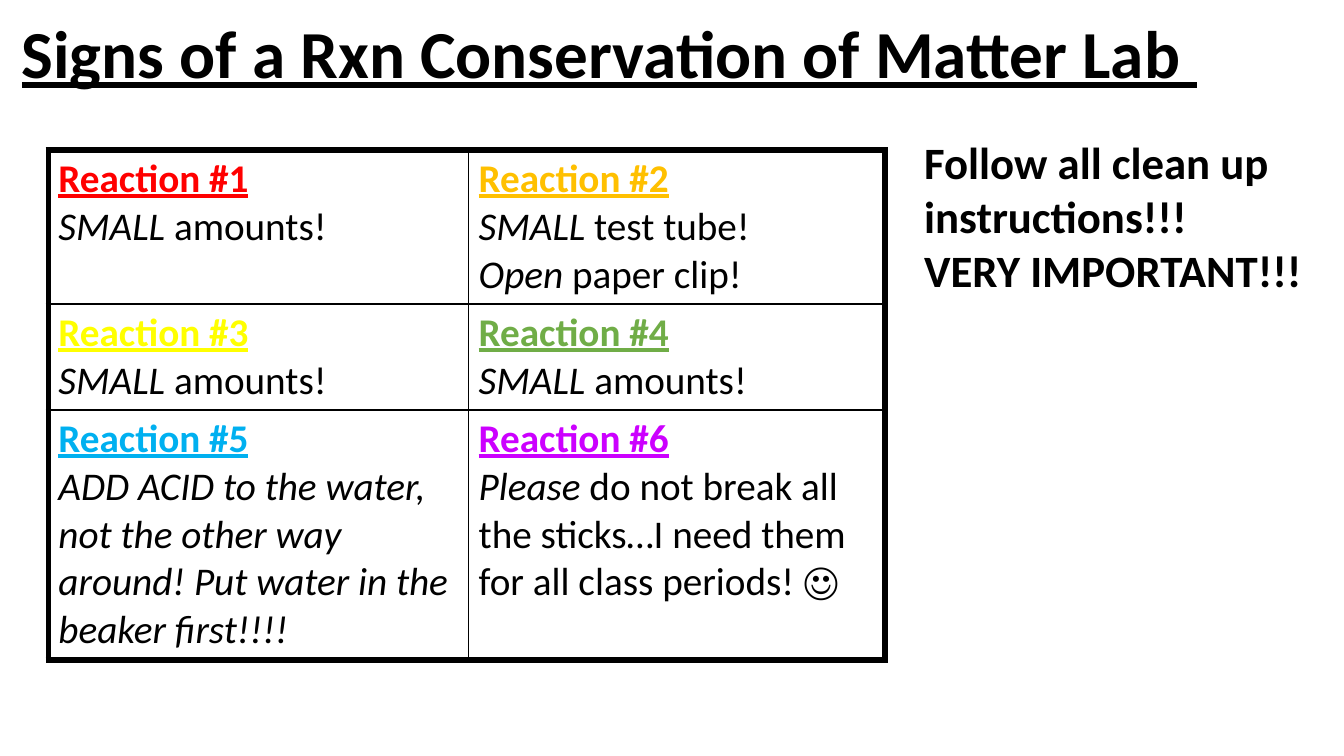
from lxml import etree
from pptx import Presentation
from pptx.dml.color import RGBColor
from pptx.enum.text import MSO_ANCHOR
from pptx.oxml.ns import qn
from pptx.util import Cm, Pt

MIDDLE, TOP = MSO_ANCHOR.MIDDLE, MSO_ANCHOR.TOP

# Colours
BLACK = RGBColor(0x00, 0x00, 0x00)
RED = RGBColor(0xFF, 0x00, 0x00)
ORANGE = RGBColor(0xFF, 0xC0, 0x00)
YELLOW = RGBColor(0xFF, 0xFF, 0x00)
GREEN = RGBColor(0x70, 0xAD, 0x47)
BLUE = RGBColor(0x00, 0xB0, 0xF0)
PURPLE = RGBColor(0xCC, 0x00, 0xFF)

# Content
TITLE = "Signs of a Rxn Conservation of Matter Lab "
CLEAN_UP = ["Follow all clean up instructions!!!", "VERY IMPORTANT!!!"]
SMALL_AMOUNTS = ("SMALL ", "amounts!")
# Each reaction: heading colour, then lines of (italic part, upright part)
REACTIONS = [
    (RED, [SMALL_AMOUNTS]),
    (ORANGE, [("SMALL", " test tube!"), ("Open", " paper clip!")]),
    (YELLOW, [SMALL_AMOUNTS]),
    (GREEN, [SMALL_AMOUNTS]),
    (BLUE, [("ADD ACID to the water, not the other way around! "
             "Put water in the beaker first!!!!", "")]),
    (PURPLE, [("Please", " do not break all the sticks…I need them "
                         "for all class periods! ☺")]),
]

# Layout in centimetres
TITLE_BOX = (0.3, -0.41, 30.73, 3.68)
NOTE_BOX = (23.04, 3.28, 10.34, 4.37)
TABLE_LEFT, TABLE_TOP = 1.22, 3.78
COLS = [10.59, 10.49]
ROWS = [3.88, 2.67, 6.3]
OUTER, INNER = 4.5, 1  # border widths in points


def add_text(p, text, size=28, color=BLACK, bold=False, italic=False, underline=False):
    r = p.add_run()
    r.text = text
    font = r.font
    font.name, font.size = "Calibri", Pt(size)
    font.bold, font.italic, font.underline = bold, italic, underline
    font.color.rgb = color


def add_box(slide, box, lines, anchor=TOP, spacing=1.0, **fmt):
    tf = slide.shapes.add_textbox(*map(Cm, box)).text_frame
    tf.word_wrap = True
    tf.vertical_anchor = anchor
    for i, line in enumerate(lines):
        p = tf.add_paragraph() if i else tf.paragraphs[0]
        p.line_spacing = spacing
        add_text(p, line, **fmt)


def set_borders(cell, widths):
    tcPr = cell._tc.get_or_add_tcPr()
    for side, width in widths.items():
        ln = etree.SubElement(tcPr, qn("a:ln" + side), w=str(Pt(width)))
        fill = etree.SubElement(ln, qn("a:solidFill"))
        etree.SubElement(fill, qn("a:srgbClr"), val=str(BLACK))


prs = Presentation()
prs.slide_width, prs.slide_height = Cm(33.87), Cm(19.05)
s = prs.slides.add_slide(prs.slide_layouts[6])

# Title
add_box(s, TITLE_BOX, [TITLE], anchor=MIDDLE, spacing=0.9,
        size=48, bold=True, underline=True)

# Reaction table
table = s.shapes.add_table(len(ROWS), len(COLS), Cm(TABLE_LEFT), Cm(TABLE_TOP),
                           Cm(sum(COLS)), Cm(sum(ROWS))).table
table.first_row = table.horz_banding = False
for col, width in zip(table.columns, COLS):
    col.width = Cm(width)
for row, height in zip(table.rows, ROWS):
    row.height = Cm(height)

for i, (color, lines) in enumerate(REACTIONS):
    y, x = divmod(i, len(COLS))
    cell = table.cell(y, x)
    tf = cell.text_frame
    add_text(tf.paragraphs[0], f"Reaction #{i + 1}", color=color,
             bold=True, underline=True)
    for stressed, rest in lines:
        p = tf.add_paragraph()
        add_text(p, stressed, italic=True)
        if rest:
            add_text(p, rest)
    on_edge = {"L": x == 0, "R": x == len(COLS) - 1,
               "T": y == 0, "B": y == len(ROWS) - 1}
    set_borders(cell, {side: OUTER if edge else INNER
                       for side, edge in on_edge.items()})
    cell.fill.background()

# Clean-up note
add_box(s, NOTE_BOX, CLEAN_UP, size=32, bold=True)

prs.save("out.pptx")
